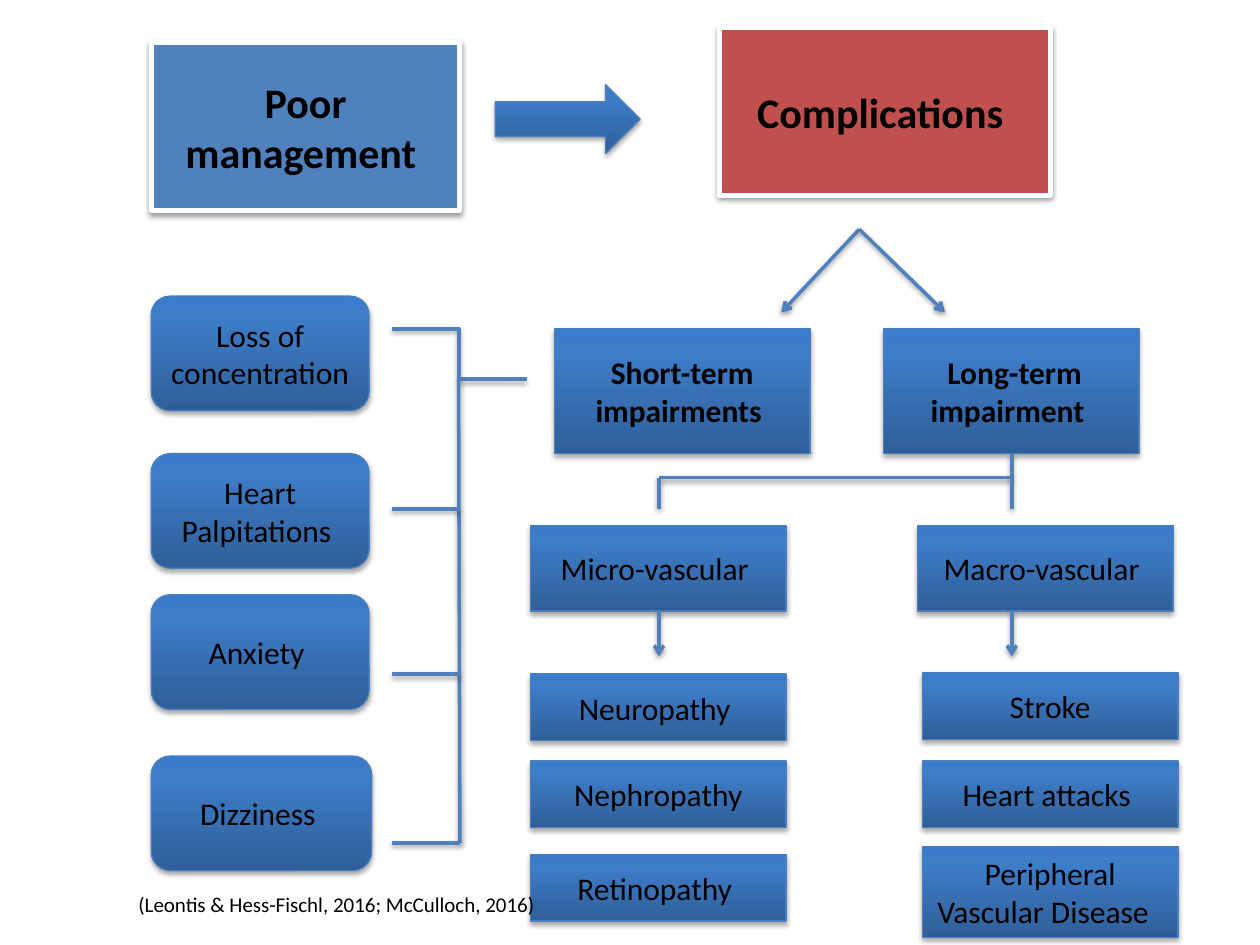
"""Build a slide on the complications of poor management."""
from copy import deepcopy

from lxml import etree
from pptx import Presentation
from pptx.dml.color import RGBColor
from pptx.enum.shapes import MSO_CONNECTOR as CONNECTOR, MSO_SHAPE as SHAPE
from pptx.enum.text import MSO_ANCHOR, MSO_AUTO_SIZE, PP_ALIGN
from pptx.oxml import parse_xml
from pptx.oxml.ns import nsdecls, qn
from pptx.util import Inches, Pt

BLACK = RGBColor(0x00, 0x00, 0x00)
WHITE = RGBColor(0xFF, 0xFF, 0xFF)
BLUE = RGBColor(0x4F, 0x81, 0xBD)
RED = RGBColor(0xC0, 0x50, 0x4D)
EDGE = RGBColor(0x4B, 0x7E, 0xBC)
GRADIENT = [
    (0, RGBColor(0x2F, 0x5F, 0x99)),
    (0.8, RGBColor(0x3D, 0x7C, 0xC7)),
    (1, RGBColor(0x3A, 0x7C, 0xCB)),
]


def add_shadow(shape, distance, opacity):
    shape._element.spPr.append(parse_xml(
        f'<a:effectLst {nsdecls("a")}>'
        f'<a:outerShdw blurRad="{Pt(3.1)}" dist="{Pt(distance)}" dir="5400000" rotWithShape="0">'
        f'<a:srgbClr val="000000"><a:alpha val="{opacity * 1000}"/></a:srgbClr>'
        '</a:outerShdw></a:effectLst>'
    ))


def add_box(kind, left, top, width, height, text="", size=18, bold=False, color=None):
    shape = slide.shapes.add_shape(kind, Inches(left), Inches(top), Inches(width), Inches(height))
    if color is not None:
        shape.fill.solid()
        shape.fill.fore_color.rgb = color
        shape.line.color.rgb = WHITE
        shape.line.width = Pt(3)
        add_shadow(shape, 1.6, 38)
    else:
        shape.fill.gradient()
        shape.fill.gradient_angle = 90
        stop_list = shape._element.spPr.find(".//" + qn("a:gsLst"))
        stop_list.append(deepcopy(stop_list[-1]))
        for stop, (position, stop_color) in zip(shape.fill.gradient_stops, GRADIENT):
            stop.position = position
            stop.color.rgb = stop_color
        shape.line.color.rgb = EDGE
        shape.line.width = Pt(0.75)
        add_shadow(shape, 1.8, 35)
    if text:
        frame = shape.text_frame
        frame.word_wrap = True
        frame.vertical_anchor = MSO_ANCHOR.MIDDLE
        paragraph = frame.paragraphs[0]
        paragraph.text = text
        paragraph.alignment = PP_ALIGN.CENTER
        paragraph.font.name = "Calibri"
        paragraph.font.size = Pt(size)
        paragraph.font.bold = bold
        paragraph.font.color.rgb = BLACK


presentation = Presentation()
presentation.slide_width = Inches(10)
presentation.slide_height = Inches(7.5)
slide = presentation.slides.add_slide(presentation.slide_layouts[6])

add_box(SHAPE.RECTANGLE, 1.2, 0.34, 2.45, 1.33, "Poor management ", 24, True, BLUE)
add_box(SHAPE.RECTANGLE, 5.71, 0.22, 2.63, 1.33, "Complications ", 24, True, RED)
add_box(SHAPE.RIGHT_ARROW, 3.93, 0.67, 1.15, 0.55)

for left, text in [(4.4, "Short-term impairments "), (7.01, " Long-term impairment ")]:
    add_box(SHAPE.RECTANGLE, left, 2.61, 2.03, 0.99, text, bold=True)

symptoms = [
    (2.35, 1.73, "Loss of concentration "),
    (3.6, 1.73, "Heart Palpitations "),
    (4.72, 1.73, "Anxiety "),
    (6, 1.75, "Dizziness "),
]
for top, width, text in symptoms:
    add_box(SHAPE.ROUNDED_RECTANGLE, 1.2, top, width, 0.91, text)

diseases = [
    (4.21, 4.17, 0.68, "Micro-vascular "),
    (4.21, 5.35, 0.53, "Neuropathy "),
    (4.21, 6.04, 0.53, "Nephropathy"),
    (4.21, 6.78, 0.53, "Retinopathy "),
    (7.28, 4.17, 0.68, "Macro-vascular "),
    (7.32, 5.34, 0.53, "Stroke"),
    (7.32, 6.04, 0.53, "Heart attacks "),
    (7.32, 6.72, 0.72, "Peripheral Vascular Disease  "),
]
for left, top, height, text in diseases:
    add_box(SHAPE.RECTANGLE, left, top, 2.03, height, text)

STRAIGHT, ELBOW = CONNECTOR.STRAIGHT, CONNECTOR.ELBOW
connections = [
    (STRAIGHT, 6.82, 1.82, 6.2, 2.48, True),
    (STRAIGHT, 6.82, 1.82, 7.5, 2.48, True),
    (ELBOW, 4.18, 3.01, 3.11, 2.61, False),
    (STRAIGHT, 3.64, 3.01, 3.65, 6.69, False),
    (STRAIGHT, 8.03, 3.6, 8.03, 3.79, False),
    (STRAIGHT, 8.03, 3.79, 5.23, 3.79, False),
]
connections += [(STRAIGHT, 3.65, y, 3.11, y, False) for y in (4.04, 5.35, 6.69)]
for x in (5.23, 8.03):
    connections += [(STRAIGHT, x, 3.79, x, 4.04, False), (STRAIGHT, x, 4.84, x, 5.21, True)]

for kind, x1, y1, x2, y2, has_arrow in connections:
    connector = slide.shapes.add_connector(kind, Inches(x1), Inches(y1), Inches(x2), Inches(y2))
    connector.line.color.rgb = BLUE
    connector.line.width = Pt(2)
    if has_arrow:
        etree.SubElement(connector.line._get_or_add_ln(), qn("a:tailEnd"), type="arrow")
    add_shadow(connector, 1.6, 38)

citation = slide.shapes.add_textbox(Inches(1), Inches(7.03), Inches(3.4), Inches(0.3))
citation.text_frame.word_wrap = True
citation.text_frame.auto_size = MSO_AUTO_SIZE.SHAPE_TO_FIT_TEXT
paragraph = citation.text_frame.paragraphs[0]
paragraph.text = "(Leontis & Hess-Fischl, 2016; McCulloch, 2016)"
paragraph.font.name = "Calibri"
paragraph.font.size = Pt(12)
paragraph.font.color.rgb = BLACK

presentation.save("out.pptx")
